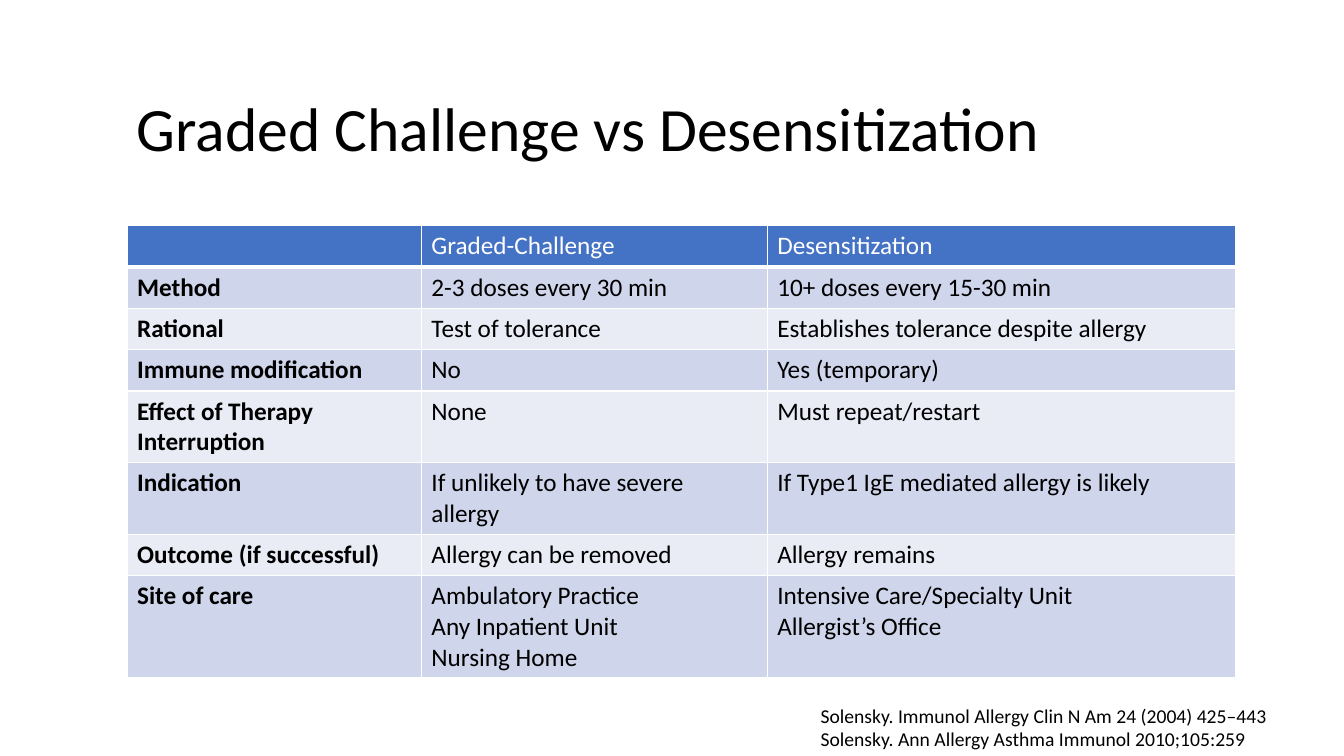
from lxml.etree import SubElement
from pptx import Presentation
from pptx.dml.color import RGBColor
from pptx.enum.text import MSO_ANCHOR as Anchor, MSO_AUTO_SIZE as AutoSize
from pptx.oxml.ns import qn
from pptx.util import Emu, Pt

PX = 9144
BLACK = RGBColor(0x00, 0x00, 0x00)
WHITE = RGBColor(0xFF, 0xFF, 0xFF)
BLUE = RGBColor(0x44, 0x72, 0xC4)
BAND_DARK = RGBColor(0xCF, 0xD5, 0xEA)
BAND_LIGHT = RGBColor(0xE9, 0xEB, 0xF5)

COLUMN_WIDTHS = [292, 343, 465]
ROW_HEIGHT = 41
COMPARISON = [
    ("", "Graded-Challenge", "Desensitization"),
    ("Method", "2-3 doses every 30 min", "10+ doses every 15-30 min"),
    ("Rational", "Test of tolerance", "Establishes tolerance despite allergy"),
    ("Immune modification", "No", "Yes (temporary)"),
    ("Effect of Therapy Interruption", "None", "Must repeat/restart"),
    ("Indication", "If unlikely to have severe allergy",
     "If Type1 IgE mediated allergy is likely"),
    ("Outcome (if successful)", "Allergy can be removed", "Allergy remains"),
    ("Site of care", "Ambulatory Practice\nAny Inpatient Unit\nNursing Home",
     "Intensive Care/Specialty Unit\nAllergist’s Office"),
]
SOURCES = ("Solensky. Immunol Allergy Clin N Am 24 (2004) 425–443\n"
           "Solensky. Ann Allergy Asthma Immunol 2010;105:259")


def px(*lengths):
    return [Emu(length * PX) for length in lengths]


def write(frame, text, size=18, color=BLACK, bold=False, spacing=None):
    for index, line in enumerate(text.split("\n")):
        para = frame.add_paragraph() if index else frame.paragraphs[0]
        para.line_spacing = spacing
        if not line:
            para.font.size = Pt(size)
            continue
        span = para.add_run()
        span.text = line
        span.font.name = "Calibri"
        span.font.size = Pt(size)
        span.font.bold = bold
        span.font.color.rgb = color


class SlideBuilder:
    """Draws text and tables on one page in a shared style."""

    def __init__(self, page):
        self.page = page
        self.border_color = WHITE

    def text(self, place, text, anchor=Anchor.TOP, fit=AutoSize.NONE, **style):
        frame = self.page.shapes.add_textbox(*px(*place)).text_frame
        frame.word_wrap = True
        frame.auto_size = fit
        frame.vertical_anchor = anchor
        write(frame, text, **style)

    def borders(self, cell, bottom):
        properties = cell._tc.get_or_add_tcPr()
        for side, width in zip("LRTB", (1, 1, 1, bottom)):
            line = SubElement(properties, qn(f"a:ln{side}"), w=str(Pt(width)))
            fill = SubElement(line, qn("a:solidFill"))
            SubElement(fill, qn("a:srgbClr"), val=str(self.border_color))

    def table(self, place, rows, widths, row_height):
        table = self.page.shapes.add_table(len(rows), len(widths), *px(*place)).table
        for column, width in zip(table.columns, px(*widths)):
            column.width = width
        for row_index, row in enumerate(rows):
            header = row_index == 0
            table.rows[row_index].height = Emu(row_height * PX)
            band = BAND_DARK if row_index % 2 else BAND_LIGHT
            for column_index, text in enumerate(row):
                cell = table.cell(row_index, column_index)
                self.borders(cell, bottom=3 if header else 1)
                cell.fill.solid()
                cell.fill.fore_color.rgb = BLUE if header else band
                write(cell.text_frame, text, color=WHITE if header else BLACK,
                      bold=column_index == 0)


def main():
    deck = Presentation()
    deck.slide_width, deck.slide_height = px(1333, 750)
    builder = SlideBuilder(deck.slides.add_slide(deck.slide_layouts[6]))
    builder.text((126, 92, 958, 77), "Graded Challenge vs Desensitization",
                 anchor=Anchor.MIDDLE, size=44, spacing=0.9)
    builder.table((126, 224, sum(COLUMN_WIDTHS), 443), COMPARISON,
                  COLUMN_WIDTHS, ROW_HEIGHT)
    builder.text((804, 693, 560, 57), SOURCES,
                 fit=AutoSize.SHAPE_TO_FIT_TEXT, size=14)
    deck.save("out.pptx")


if __name__ == "__main__":
    main()
